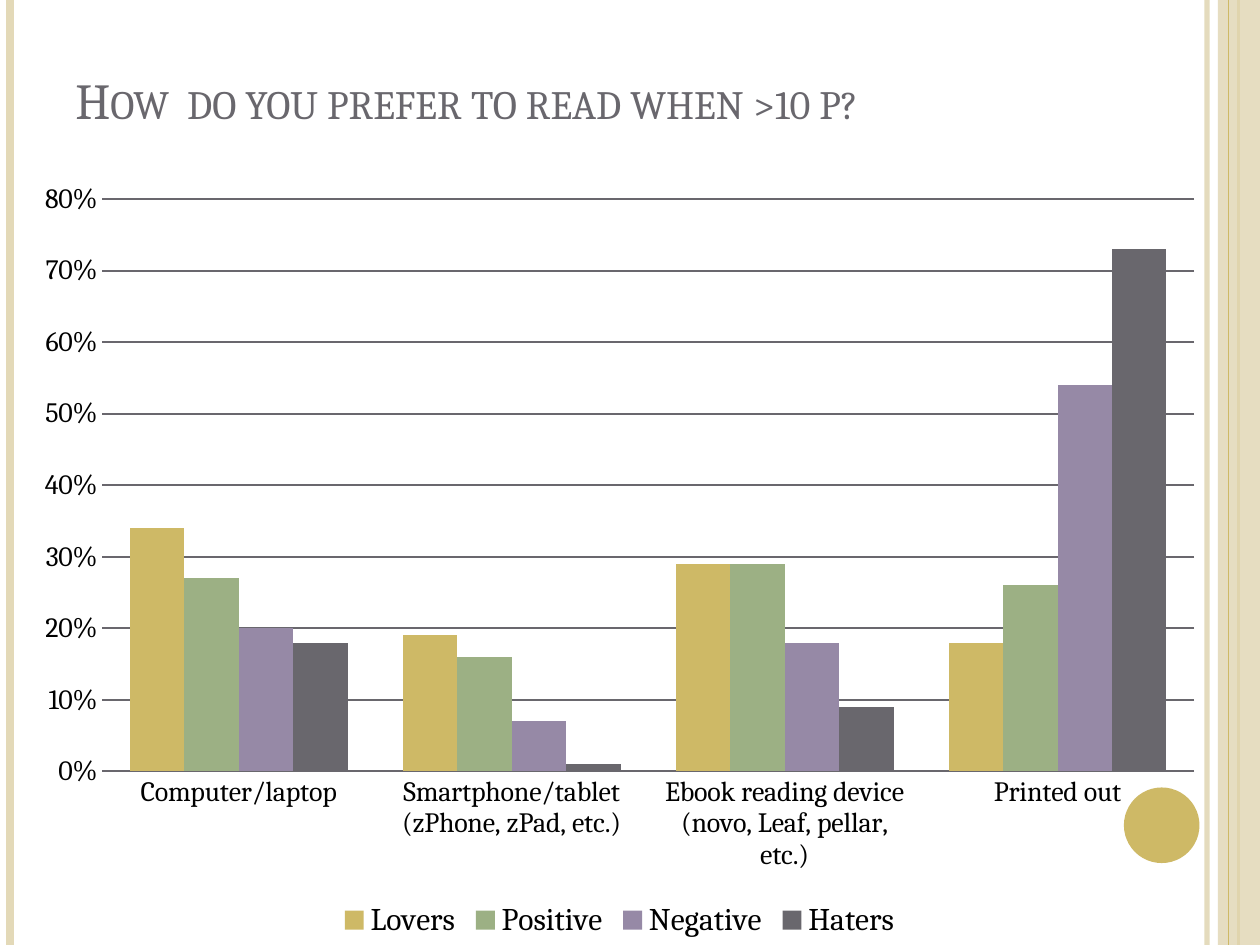
from dataclasses import dataclass
from lxml.etree import SubElement as Sub
from pptx import Presentation
from pptx.chart.data import CategoryChartData as Data
from pptx.dml.color import RGBColor as RGB
from pptx.enum.chart import XL_CHART_TYPE as Kind, XL_LEGEND_POSITION as Spot, XL_TICK_MARK as Tick
from pptx.enum.shapes import MSO_CONNECTOR as Conn, MSO_SHAPE as Form
from pptx.enum.text import MSO_ANCHOR as Anchor
from pptx.oxml import parse_xml
from pptx.oxml.ns import qn
from pptx.util import Pt

TITLE = "How  do you prefer to read when >10 p?"
CATS = [
    "Computer/laptop",
    "Smartphone/tablet (zPhone, zPad, etc.)",
    "Ebook reading device (novo, Leaf, pellar, etc.)",
    "Printed out",
]


@dataclass(frozen=True)
class Theme:
    font: str = "Cambria"
    gold: str = "CEB966"
    sand: str = "E3D9B8"
    green: str = "9CB084"
    mauve: str = "9689A6"
    grey: str = "69676D"
    ink: str = "000000"
    head: float = 28.8
    axis: float = 16
    key: float = 18


T = Theme()
SERIES = [
    ("Lovers", T.gold, (0.34, 0.19, 0.29, 0.18)),
    ("Positive", T.green, (0.27, 0.16, 0.29, 0.26)),
    ("Negative", T.mauve, (0.20, 0.07, 0.18, 0.54)),
    ("Haters", T.grey, (0.18, 0.01, 0.09, 0.73)),
]
BACK = [
    ("line", 689.76, T.sand, 3, 93),
    ("line", 5.76, T.sand, 4.5, 100),
    ("line", 707.76, T.gold, 1.5, 100),
    ("form", Form.RECTANGLE, (696, 0, 24, 540), T.sand, 87),
    ("line", 702, T.gold, 0.75, 100),
    ("form", Form.OVAL, (642.24, 450, 43.2, 43.2), T.gold, 100),
]


def pts(box):
    return [Pt(n) for n in box]


def paint(fill, color, alpha=100):
    fill.solid()
    fill.fore_color.rgb = RGB.from_string(color)
    if alpha < 100:
        tint = fill._xPr.find(".//" + qn("a:srgbClr"))
        Sub(tint, qn("a:alpha"), val=str(alpha * 1000))


def style(font, size, color=T.ink):
    font.name = T.font
    font.size = Pt(size)
    font.color.rgb = RGB.from_string(color)


def stripe(slide, x, color, width, alpha):
    line = slide.shapes.add_connector(Conn.STRAIGHT, *pts((x, 0, x, 540)))
    line.line.width = Pt(width)
    paint(line.line.fill, color, alpha)
    Sub(line._element.spPr, qn("a:effectLst"))


def form(slide, kind, box, color, alpha):
    item = slide.shapes.add_shape(kind, *pts(box))
    item.shadow.inherit = False
    item.line.fill.background()
    paint(item.fill, color, alpha)


def write(slide, text, *, box, size, color, foot, caps):
    frame = slide.shapes.add_textbox(*pts(box)).text_frame
    frame.word_wrap = True
    frame.vertical_anchor = Anchor.BOTTOM
    frame.margin_bottom = Pt(foot)
    run = frame.paragraphs[0].add_run()
    run.text = text
    style(run.font, size, color)
    run.font._element.set("cap", caps)


def plot(slide, box):
    data = Data(number_format="0%")
    data.categories = CATS
    for name, _, vals in SERIES:
        data.add_series(name, vals)
    chart = slide.shapes.add_chart(Kind.COLUMN_CLUSTERED, *pts(box), data).chart
    style(chart.font, 10)
    chart.has_title = False
    chart._chartSpace.chart.addnext(parse_xml(
        '<c:spPr xmlns:c="http://schemas.openxmlformats.org/drawingml/2006/chart" '
        'xmlns:a="http://schemas.openxmlformats.org/drawingml/2006/main">'
        '<a:noFill/><a:ln><a:noFill/></a:ln></c:spPr>'))
    bars = chart.plots[0]
    bars.gap_width = 101
    bars.overlap = 0
    bars.vary_by_categories = False
    for ser, (_, color, _) in zip(bars.series, SERIES):
        paint(ser.format.fill, color)
        ser.invert_if_negative = False
    cat, val = chart.category_axis, chart.value_axis
    for axis in (cat, val):
        axis.major_tick_mark = axis.minor_tick_mark = Tick.NONE
        style(axis.tick_labels.font, T.axis)
    val.minimum_scale, val.maximum_scale, val.major_unit = 0, 0.8, 0.1
    val.tick_labels.number_format = "0%"
    val.tick_labels.number_format_is_linked = False
    val.format.line.fill.background()
    val.has_major_gridlines = True
    for rule in (val.major_gridlines.format.line, cat.format.line):
        rule.width = Pt(1)
        paint(rule.fill, T.grey)
    chart.has_legend = True
    chart.legend.position = Spot.BOTTOM
    chart.legend.include_in_layout = False
    style(chart.legend.font, T.key)


def main():
    deck = Presentation()
    deck.slide_width, deck.slide_height = Pt(720), Pt(540)
    slide = deck.slides.add_slide(deck.slide_layouts[6])
    draw = {"line": stripe, "form": form}
    for kind, *args in BACK:
        draw[kind](slide, *args)
    plot(slide, (12, 96, 684, 444))
    write(slide, TITLE, box=(36, 21.6, 642.24, 90), size=T.head,
          color=T.grey, foot=37.6, caps="small")
    deck.save("out.pptx")


if __name__ == "__main__":
    main()
